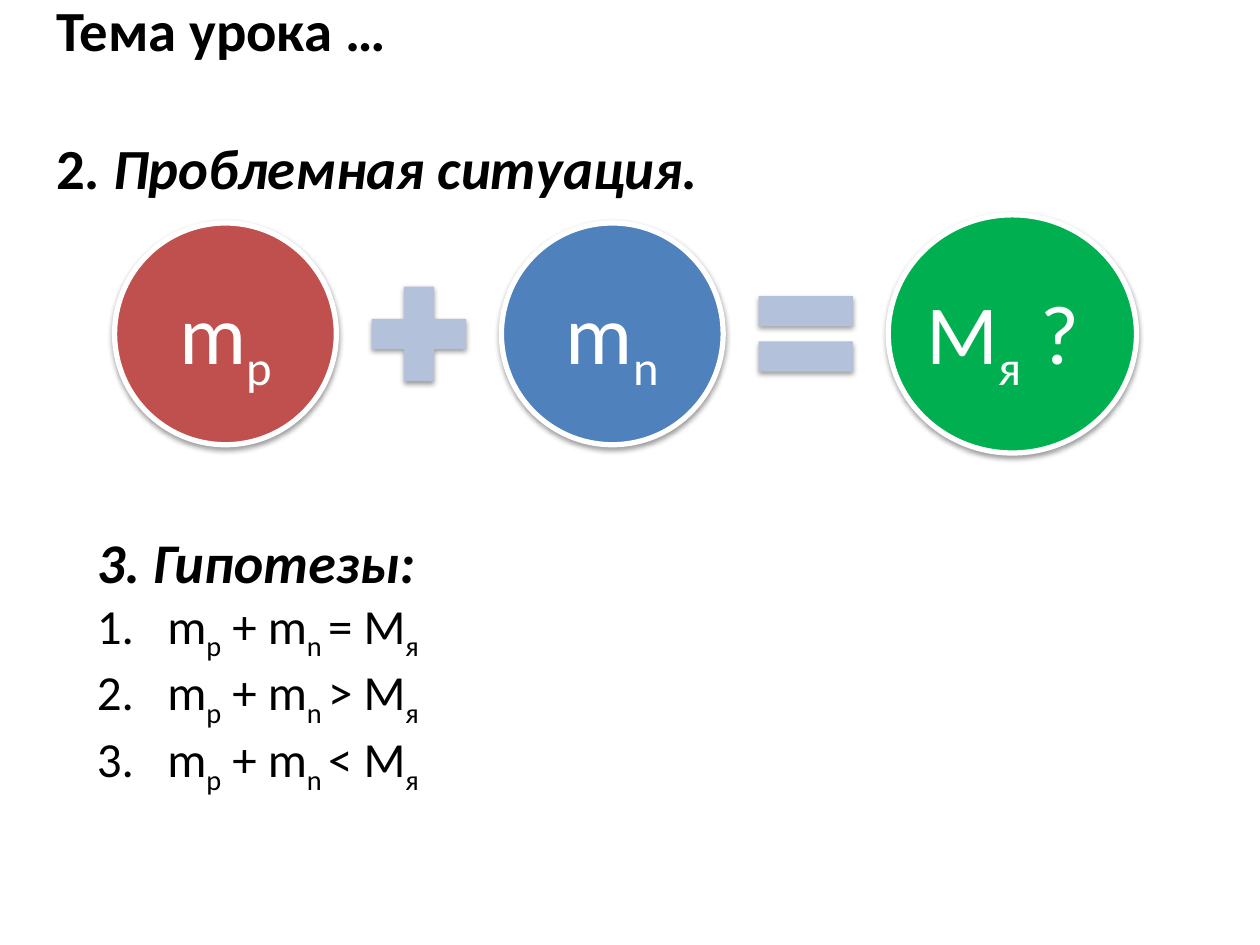
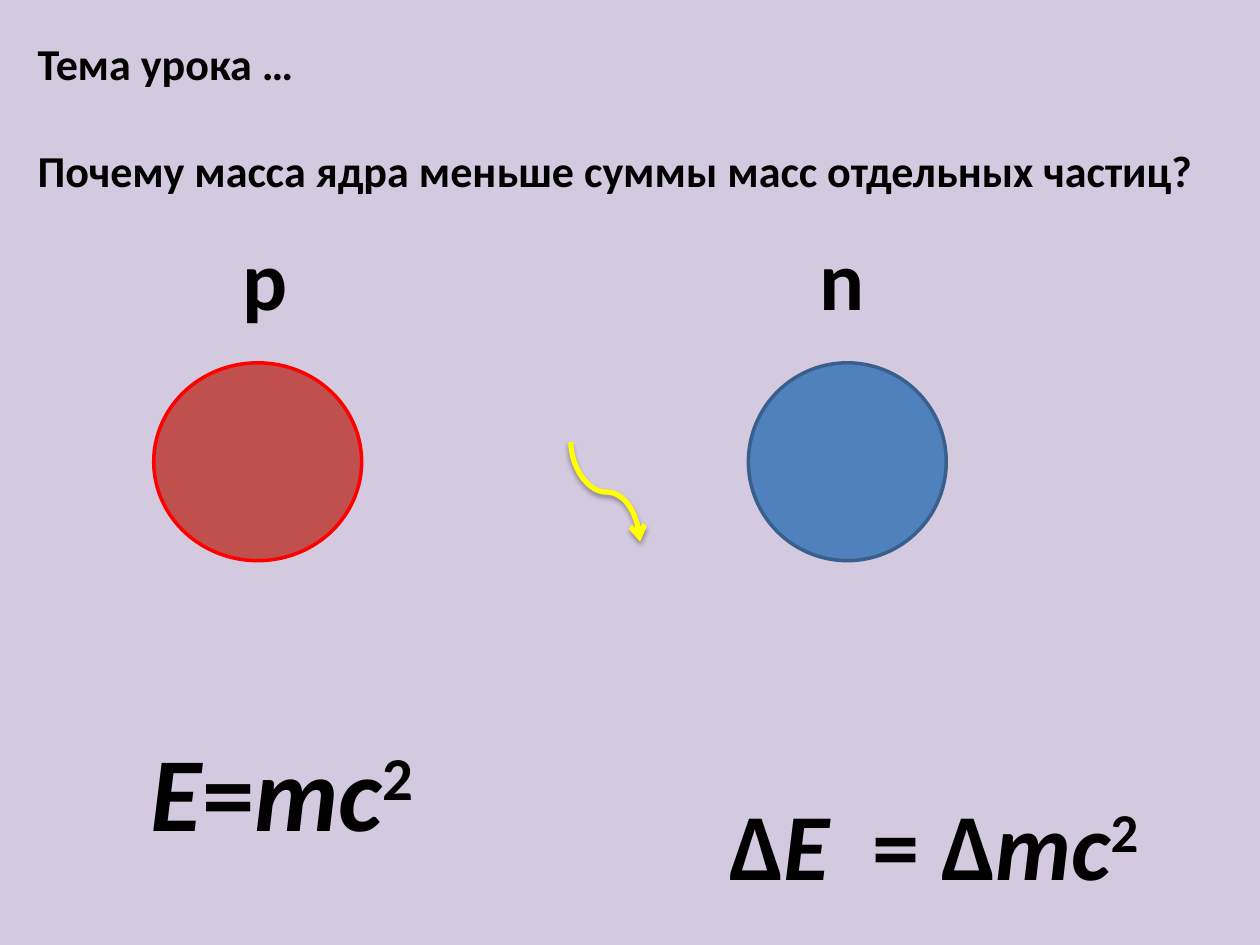
from dataclasses import dataclass

from lxml.etree import SubElement
from pptx import Presentation
from pptx.dml.color import RGBColor
from pptx.enum.shapes import MSO_CONNECTOR as Connector, MSO_SHAPE as Preset
from pptx.enum.text import MSO_ANCHOR as Anchor, PP_ALIGN as Align
from pptx.oxml.ns import qn
from pptx.util import Inches, Pt

WIDTH, HEIGHT = Inches(10), Inches(7.5)
COLUMNS, ROWS = 100, 75


@dataclass(frozen=True)
class Theme:
    font: str = "Calibri"
    ink: str = "000000"
    paper: str = "FFFFFF"
    lilac: str = "D4CAE0"
    proton: str = "C0504D"
    proton_edge: str = "FF0000"
    neutron: str = "4F81BD"
    neutron_edge: str = "3A5F8C"
    nucleus: str = "00B050"
    sign: str = "B3C1DB"
    arrow: str = "FFFF00"
    title: float = 32.4
    question: float = 25.2
    heading: float = 32
    item: float = 28
    symbol: float = 48
    energy: float = 60
    energy_change: float = 54


THEME = Theme()


@dataclass(frozen=True)
class Piece:
    """A stretch of text; raised is a baseline shift in percent, spacing is in points."""
    text: str
    italic: bool = False
    raised: int = 0
    spacing: float = 0


def sub(text):
    return Piece(text, raised=-25)


def sup(text):
    return Piece(text, raised=30)


def place(left, top, width, height):
    """Turn grid columns and rows into slide lengths."""
    column, row = WIDTH / COLUMNS, HEIGHT / ROWS
    return int(left * column), int(top * row), int(width * column), int(height * row)


def write(paragraph, pieces, size, color=THEME.ink, bold=False):
    for piece in pieces:
        run = paragraph.add_run()
        run.text = piece.text
        font = run.font
        font.name, font.size = THEME.font, Pt(size)
        font.bold, font.italic = bold, piece.italic
        font.color.rgb = RGBColor.from_string(color)
        properties = font._element
        if piece.raised:
            properties.set("baseline", str(piece.raised * 1000))
        if piece.spacing:
            properties.set("spc", str(int(piece.spacing * 100)))


def add_text_frame(slide, box, anchor=Anchor.TOP):
    frame = slide.shapes.add_textbox(*place(*box)).text_frame
    frame.word_wrap = True
    frame.vertical_anchor = anchor
    return frame


def add_title(slide, box, size, second_line):
    """Lesson topic, and one line lower the step of the lesson."""
    frame = add_text_frame(slide, box, Anchor.MIDDLE)
    write(frame.paragraphs[0], [Piece("Тема урока …")], size, bold=True)
    paragraph = frame.add_paragraph()
    paragraph.space_before = Pt(round(size * 1.22))
    write(paragraph, second_line, size, bold=True)


def add_formula(slide, box, pieces, size):
    frame = add_text_frame(slide, box)
    write(frame.paragraphs[0], pieces, size, bold=True)


def add_shadow(effects, distance, opacity):
    shadow = SubElement(effects, qn("a:outerShdw"), blurRad=str(Pt(3.1)),
                        dist=str(Pt(distance)), dir="5400000", rotWithShape="0")
    color = SubElement(shadow, qn("a:srgbClr"), val="000000")
    SubElement(color, qn("a:alpha"), val=str(opacity * 1000))


def add_figure(slide, preset, box, fill, edge=None, edge_width=0, shadowed=False):
    shape = slide.shapes.add_shape(preset, *place(*box))
    shape.fill.solid()
    shape.fill.fore_color.rgb = RGBColor.from_string(fill)
    if edge:
        shape.line.color.rgb = RGBColor.from_string(edge)
        shape.line.width = Pt(edge_width)
    else:
        shape.line.fill.background()
    shape.shadow.inherit = False
    if shadowed:
        add_shadow(shape._element.spPr.find(qn("a:effectLst")), 1.6, 38)
    return shape


def add_mass_circle(slide, box, fill, pieces):
    circle = add_figure(slide, Preset.OVAL, box, fill, THEME.paper, 3, shadowed=True)
    frame = circle.text_frame
    frame.word_wrap = False
    frame.vertical_anchor = Anchor.MIDDLE
    paragraph = frame.paragraphs[0]
    paragraph.alignment = Align.CENTER
    paragraph.line_spacing = 0.9
    write(paragraph, pieces, THEME.symbol, THEME.paper)


def add_mass_equation(slide):
    """Circles and signs in one row, with equal gaps, on a common axis."""
    axis, gap, left = 26.5, 1.45, 9.1
    terms = [
        (17.6, 17.6, THEME.proton, [Piece("m"), sub("p")]),
        (10.2, 10.2, Preset.MATH_PLUS, None),
        (17.6, 17.6, THEME.neutron, [Piece("m"), sub("n")]),
        (10.2, 10.2, Preset.MATH_EQUAL, None),
        (19.7, 18.9, THEME.nucleus, [Piece("M"), sub("я"), Piece(" ? ")]),
    ]
    for width, height, look, pieces in terms:
        box = (left, axis - height / 2, width, height)
        if pieces:
            add_mass_circle(slide, box, look, pieces)
        else:
            add_figure(slide, look, box, THEME.sign, shadowed=True)
        left += width + gap


def number(paragraph, indent):
    properties = paragraph._p.get_or_add_pPr()
    properties.set("marL", str(indent))
    properties.set("indent", str(-indent))
    SubElement(properties, qn("a:buFont"), typeface="+mj-lt")
    SubElement(properties, qn("a:buAutoNum"), type="arabicPeriod")


def add_hypotheses(slide, box):
    frame = add_text_frame(slide, box)
    write(frame.paragraphs[0], [Piece("3. Гипотезы:", italic=True)], THEME.heading, bold=True)
    for relation in "=><":
        paragraph = frame.add_paragraph()
        number(paragraph, Inches(0.56))
        pieces = [Piece("m"), sub("p"), Piece(" + m"), sub("n "),
                  Piece(f"{relation} M"), sub("я")]
        write(paragraph, pieces, THEME.item)


def add_particle_names(slide, box, stops):
    """Names on one line, each at its own tab stop."""
    paragraph = add_text_frame(slide, box).paragraphs[0]
    tabs = SubElement(paragraph._p.get_or_add_pPr(), qn("a:tabLst"))
    for stop in stops:
        SubElement(tabs, qn("a:tab"), pos=str(Inches(stop)), algn="l")
    write(paragraph, [Piece("\tp\tn")], THEME.symbol, bold=True)


def add_energy_arrow(slide, box):
    """Curved arrow; the box is the one before the quarter turn."""
    left, top, width, height = place(*box)
    arrow = slide.shapes.add_connector(Connector.CURVE, left, top, left + width, top + height)
    arrow.line.color.rgb = RGBColor.from_string(THEME.arrow)
    arrow.line.width = Pt(3)
    properties = arrow._element.spPr
    frame = properties.find(qn("a:xfrm"))
    frame.set("rot", str(270 * 60000))
    frame.set("flipH", "1")
    SubElement(properties.find(qn("a:ln")), qn("a:tailEnd"), type="arrow")
    add_shadow(SubElement(properties, qn("a:effectLst")), 1.8, 35)


def add_slide(presentation, background):
    slide = presentation.slides.add_slide(presentation.slide_layouts[6])
    fill = slide.background.fill
    fill.solid()
    fill.fore_color.rgb = RGBColor.from_string(background)
    return slide


def build_problem_slide(presentation):
    slide = add_slide(presentation, THEME.paper)
    add_title(slide, (3.5, 0, 93.1, 15.6), THEME.title,
              [Piece("2"), Piece(". Проблемная ситуация.", italic=True)])
    add_mass_equation(slide)
    add_hypotheses(slide, (6.7, 41.4, 88.2, 23.6))


def build_energy_slide(presentation):
    slide = add_slide(presentation, THEME.lilac)
    add_title(slide, (2, 3, 98, 12.5), THEME.question,
              [Piece("Почему масса ядра меньше суммы масс отдельных частиц?")])
    add_particle_names(slide, (5, 17.5, 90, 49.5), (1.33, 5.91))
    add_figure(slide, Preset.OVAL, (12.2, 28.8, 16.5, 15.7),
               THEME.proton, THEME.proton_edge, 2)
    add_figure(slide, Preset.OVAL, (59.4, 28.8, 15.7, 15.7),
               THEME.neutron, THEME.neutron_edge, 2)
    add_energy_arrow(slide, (44.1, 36.3, 7.9, 5.5))
    mass = Piece("mс", italic=True)
    add_formula(slide, (11, 57.2, 27, 11.1),
                [Piece("E", italic=True), Piece("="), mass, sup("2")], THEME.energy)
    add_formula(slide, (56.9, 61.9, 38, 10.1),
                [Piece("Δ"), Piece("E", italic=True, spacing=12.2), Piece(" = Δ"),
                 mass, sup("2")], THEME.energy_change)


def main():
    presentation = Presentation()
    presentation.slide_width, presentation.slide_height = WIDTH, HEIGHT
    build_problem_slide(presentation)
    build_energy_slide(presentation)
    presentation.save("out.pptx")


if __name__ == "__main__":
    main()
